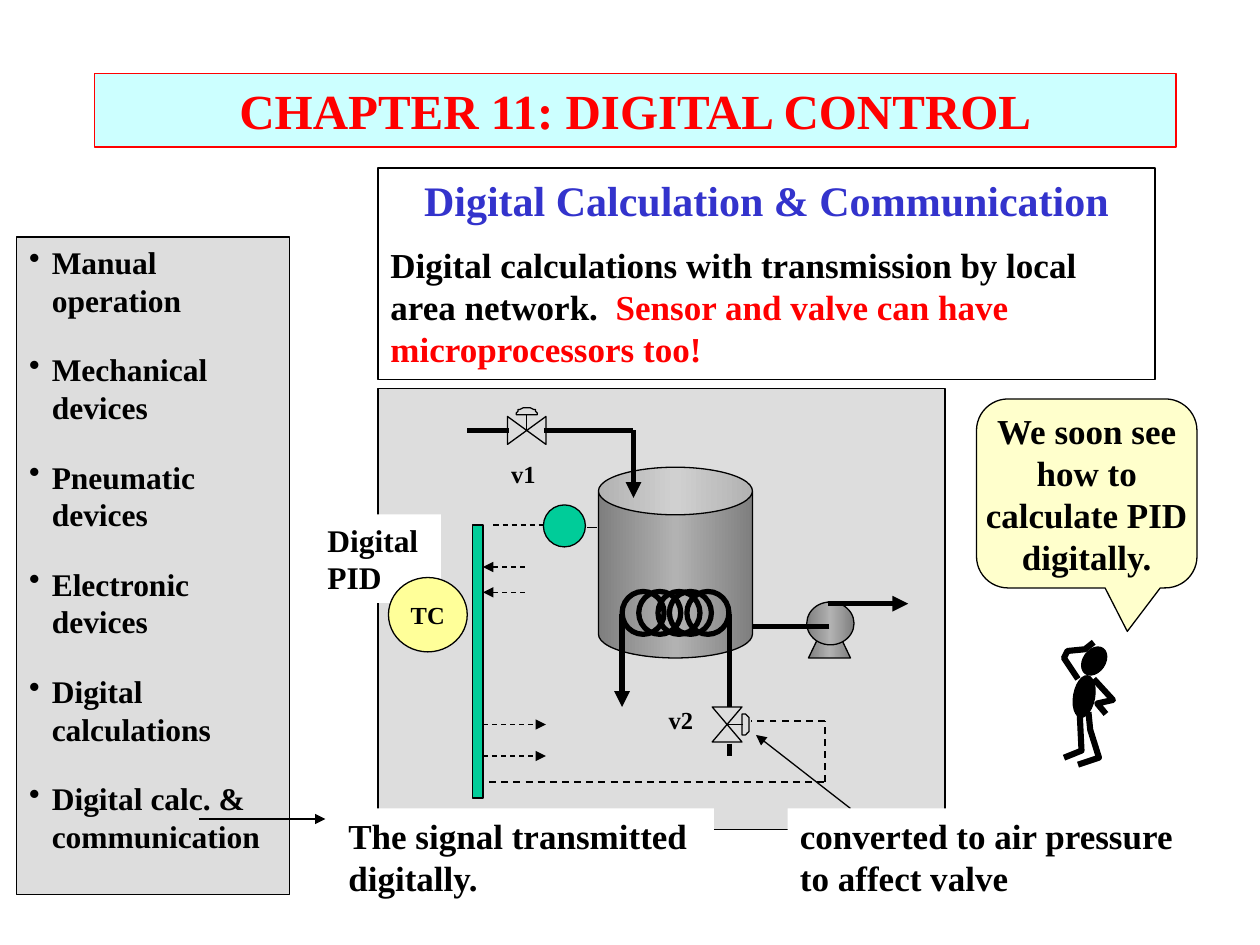
from copy import deepcopy
from dataclasses import dataclass
from itertools import pairwise
from math import cos, pi, sin

from pptx import Presentation
from pptx.dml.color import RGBColor
from pptx.enum.dml import MSO_LINE
from pptx.enum.shapes import MSO_CONNECTOR, MSO_SHAPE
from pptx.enum.text import MSO_ANCHOR, PP_ALIGN
from pptx.oxml.ns import qn
from pptx.util import Pt

RECT, ELLIPSE = MSO_SHAPE.RECTANGLE, MSO_SHAPE.OVAL
COIL_RING, CAN = MSO_SHAPE.FLOWCHART_CONNECTOR, MSO_SHAPE.CAN
PUMP_BASE = MSO_SHAPE.FLOWCHART_MANUAL_OPERATION
CALLOUT = MSO_SHAPE.ROUNDED_RECTANGULAR_CALLOUT
LEFT, CENTER = PP_ALIGN.LEFT, PP_ALIGN.CENTER
TOP, MIDDLE = MSO_ANCHOR.TOP, MSO_ANCHOR.MIDDLE
DASH = MSO_LINE.DASH
FONT = "Times New Roman"
BLACK, WHITE, RED, BLUE = "000000", "FFFFFF", "FF0000", "3333CC"
GREY, GREEN, STEEL = "DDDDDD", "00CC99", ("7F7F7F", "B2B2B2")
PIPE, THIN, LIMB = 3, 0.75, 3.5

Point = tuple[float, float]


@dataclass
class Paragraph:
    spans: list[tuple[str, str]]
    size: float
    align: PP_ALIGN = LEFT
    before: float = 0
    bullet: bool = False


@dataclass
class Box:
    left: float
    top: float
    width: float
    height: float
    kind: MSO_SHAPE = RECT
    fill: str | tuple[str, str] | None = None
    line: str | None = BLACK
    weight: float = THIN
    text: tuple[Paragraph, ...] = ()
    anchor: MSO_ANCHOR = TOP
    wrap: bool = True
    adjust: tuple[float, ...] = ()
    rotation: float = 0


@dataclass
class Route:
    """Straight stretches through the points, with any arrow at the last."""
    points: list[Point]
    weight: float = THIN
    arrow: bool = False
    dashed: bool = False


def color(value: str) -> RGBColor:
    return RGBColor.from_string(value)


def plain(text: str, size: float, align: PP_ALIGN = LEFT, before: float = 0,
          bullet: bool = False, tint: str = BLACK) -> Paragraph:
    return Paragraph([(text, tint)], size, align, before, bullet)


def write(frame, paragraphs: tuple[Paragraph, ...]) -> None:
    for index, item in enumerate(paragraphs):
        paragraph = frame.add_paragraph() if index else frame.paragraphs[0]
        paragraph.alignment = item.align
        paragraph.space_before = Pt(item.before if index else 0)
        paragraph.font.name, paragraph.font.size = FONT, Pt(item.size)
        paragraph.font.bold = True
        if item.bullet:
            properties = paragraph._p.get_or_add_pPr()
            properties.set("marL", str(Pt(13)))
            properties.set("indent", str(Pt(-13)))
            mark = properties.makeelement(qn("a:buChar"), {"char": "•"})
            properties.insert_element_before(mark, "a:defRPr")
        for text, tint in item.spans:
            span = paragraph.add_run()
            span.text = text
            span.font.color.rgb = color(tint)


def fill_steel(shape) -> None:
    """Shade from dark edges to a light centre, left to right."""
    shape.fill.gradient()
    shape.fill.gradient_angle = 0
    for stop, tint in zip(shape.fill.gradient_stops, STEEL):
        stop.color.rgb = color(tint)
    stops = shape._element.spPr.find(".//" + qn("a:gsLst"))
    stops[1].set("pos", "50000")
    edge = deepcopy(stops[0])
    edge.set("pos", "100000")
    stops.append(edge)


def draw_box(page, box: Box) -> None:
    shape = page.shapes.add_shape(box.kind, Pt(box.left), Pt(box.top),
                                  Pt(box.width), Pt(box.height))
    shape.shadow.inherit = False
    shape.rotation = box.rotation
    for index, value in enumerate(box.adjust):
        shape.adjustments[index] = value
    if box.fill == STEEL:
        fill_steel(shape)
    elif box.fill:
        shape.fill.solid()
        shape.fill.fore_color.rgb = color(box.fill)
    else:
        shape.fill.background()
    if box.line:
        shape.line.color.rgb, shape.line.width = color(box.line), Pt(box.weight)
    else:
        shape.line.fill.background()
    if box.text:
        frame = shape.text_frame
        frame.word_wrap, frame.vertical_anchor = box.wrap, box.anchor
        write(frame, box.text)


def draw_route(page, route: Route) -> None:
    for start, end in pairwise(route.points):
        ends = [Pt(value) for value in (*start, *end)]
        connector = page.shapes.add_connector(MSO_CONNECTOR.STRAIGHT, *ends)
        connector.line.color.rgb, connector.line.width = color(BLACK), Pt(route.weight)
        if route.dashed:
            connector.line.dash_style = DASH
        properties = connector._element.spPr
        if route.arrow and end == route.points[-1]:
            outline = connector.line._get_or_add_ln()
            outline.append(outline.makeelement(qn("a:tailEnd"), {"type": "triangle"}))
        properties.append(properties.makeelement(qn("a:effectLst"), {}))


def draw_outline(page, points: list[Point], weight: float = THIN, close: bool = True) -> None:
    builder = page.shapes.build_freeform(*points[0], scale=Pt(1))
    builder.add_line_segments(points[1:], close=close)
    shape = builder.convert_to_shape()
    shape.shadow.inherit = False
    shape.fill.background()
    shape.line.color.rgb, shape.line.width = color(BLACK), Pt(weight)


def draw_valve(page, x: float, y: float, upright: bool) -> None:
    """Bow tie on the pipe, with a domed actuator above it or to its right."""
    def place(along: float, out: float) -> Point:
        return (x + out, y + along) if upright else (x + along, y - out)

    corners = [(side * 10.5, end * 8.5) for side in (-1, 1) for end in (-1, 1)]
    draw_outline(page, [place(*corner) for corner in corners])
    draw_route(page, Route([place(0, 0), place(0, 9)]))
    arc = [pi * step / 16 for step in range(17)]
    draw_outline(page, [place(6.4 * cos(a), 9 + 3.8 * sin(a)) for a in arc])


STAGES = ("Manual operation", "Mechanical devices", "Pneumatic devices", "Electronic devices",
          "Digital calculations", "Digital calc. & communication")
SPEECH = ("We soon see", "how to", "calculate PID", "digitally.")
SUMMARY = Paragraph([
    ("Digital calculations with transmission by local area network.  ", BLACK),
    ("Sensor and valve can have microprocessors too!", RED)], 20, before=11)
PANELS = [
    Box(54, 42, 618, 42, fill="CCFFFF", line=RED, anchor=MIDDLE,
        text=(plain("CHAPTER 11: DIGITAL CONTROL", 28, CENTER, tint=RED),)),
    Box(9.5, 135.5, 156, 375.5, fill=GREY,
        text=tuple(plain(stage, 18, before=18, bullet=True) for stage in STAGES)),
    Box(216, 96, 444, 121, text=(
        plain("Digital Calculation & Communication", 24, CENTER, tint=BLUE), SUMMARY)),
    Box(216, 222, 324, 252, fill=GREY),
    Box(558, 228, 126, 108, CALLOUT, "FFFFCC", anchor=MIDDLE, wrap=False,
        adjust=(0.184, 0.73, 0.167), text=tuple(plain(row, 20, CENTER) for row in SPEECH)),
    Box(342, 267, 88, 109, CAN, STEEL, adjust=(0.309,)),
    Box(462, 366, 24, 10, PUMP_BASE, STEEL, rotation=180),
    *(Box(left, 338, 24, 24.5, COIL_RING, weight=PIPE) for left in (355.5, 365, 376, 382.5, 392.5)),
    Box(461, 344, 27, 24.5, ELLIPSE, STEEL),
]
FIGURE_BODY = [  # head, torso
    Box(619, 369, 12.5, 17.5, ELLIPSE, BLACK, rotation=35),
    Box(613.5, 386, 12, 24, ELLIPSE, BLACK, rotation=10),
]
FIGURE_LIMBS = [  # raised arm, arm on hip, two legs
    [(616, 388), (608, 376), (610, 372), (620, 371), (625, 367)],
    [(625, 388), (636, 400), (627, 402), (632, 408)],
    [(622, 407), (623, 417), (628, 433), (616, 437)],
    [(617, 408), (618, 429), (608, 433)],
]
LABELS = [
    *(Box(left, top, 42, 24, line=None, text=(plain(name, 14),))
      for name, left, top in (("v1", 285, 258.5), ("v2", 375, 399.5))),
    Box(310.5, 288.5, 24, 24, ELLIPSE, GREEN),
    Box(180, 294, 72, 50.5, fill=WHITE, line=None, text=(plain("Digital", 18), plain("PID", 18))),
    Box(222, 330, 45, 42.5, ELLIPSE, "FFFF99", anchor=MIDDLE, wrap=False,
        text=(plain("TC", 14, CENTER),)),
    Box(270, 300, 6, 156, fill=GREEN),
    *(Box(left, 462, width, 55.5, fill=WHITE, line=None, text=(plain(text, 20),))
      for left, width, text in ((192, 216, "The signal transmitted digitally."),
                                (450, 240, "converted to air pressure to affect valve"))),
]
ROUTES = [
    Route([(114, 468), (186, 468)], 1.5, arrow=True),
    Route([(486, 462), (432, 420)], arrow=True),
    Route([(355.5, 351), (355.5, 404)], PIPE, arrow=True),
    Route([(417, 351), (417, 404)], PIPE),
    Route([(417, 425), (417, 432)], PIPE),
    Route([(474, 358), (430, 358)], PIPE),
    Route([(473, 345), (519, 345)], PIPE, arrow=True),
    Route([(311, 246), (362, 246), (362, 284.5)], PIPE, arrow=True),
    Route([(267, 246), (291, 246)], PIPE),
    Route([(279.5, 447), (471.5, 447), (471.5, 412), (429, 412)], 1, dashed=True),
    Route([(282, 300), (312, 300)], dashed=True),
    Route([(335.5, 301.5), (341, 301.5)]),
    *(Route([(300, y), (276, y)], arrow=True, dashed=True) for y in (324, 338.5)),
    *(Route([(276, y), (312, y)], arrow=True, dashed=True) for y in (414, 432)),
]


def main() -> None:
    deck = Presentation()
    deck.slide_width, deck.slide_height = Pt(720), Pt(540)
    page = deck.slides.add_slide(deck.slide_layouts[6])
    for box in PANELS + FIGURE_BODY:
        draw_box(page, box)
    for limb in FIGURE_LIMBS:
        draw_outline(page, limb, LIMB, close=False)
    for route in ROUTES:
        draw_route(page, route)
    draw_valve(page, 301, 246, upright=False)
    draw_valve(page, 415.5, 414, upright=True)
    for label in LABELS:
        draw_box(page, label)
    deck.save("out.pptx")


if __name__ == "__main__":
    main()
